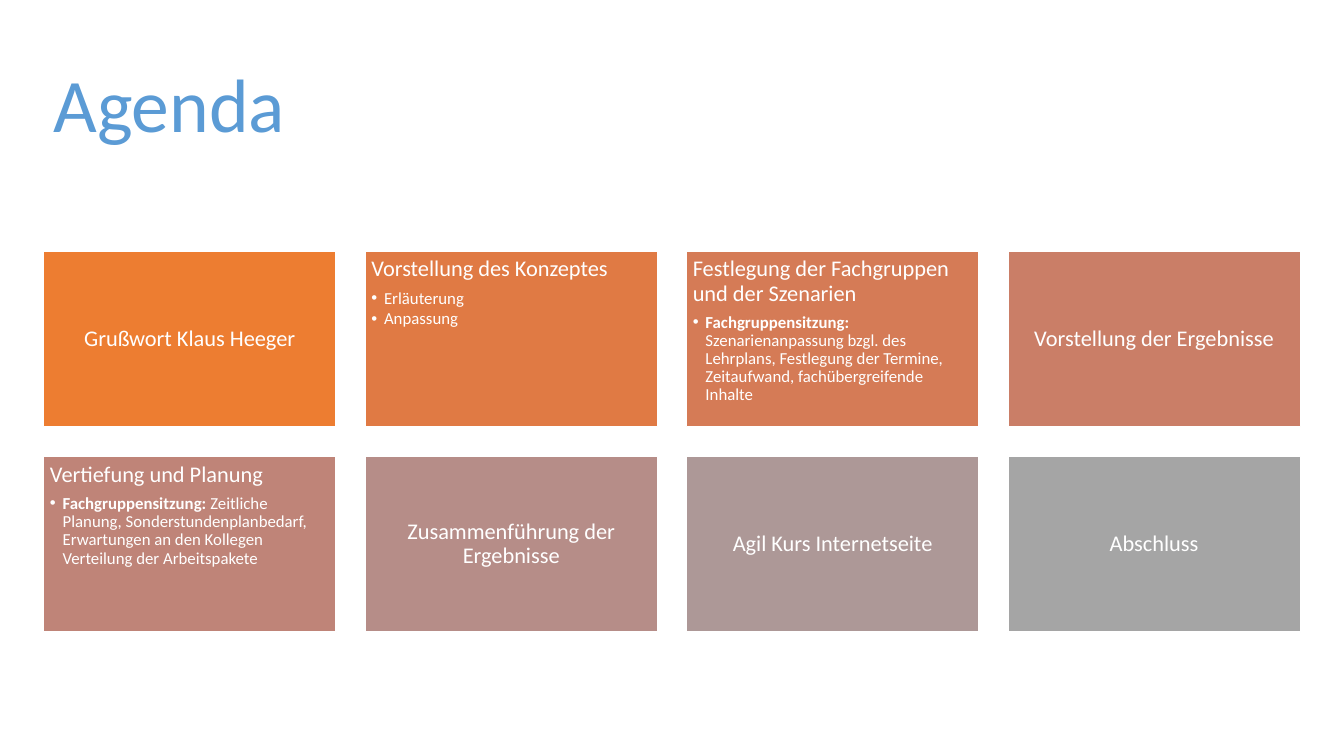
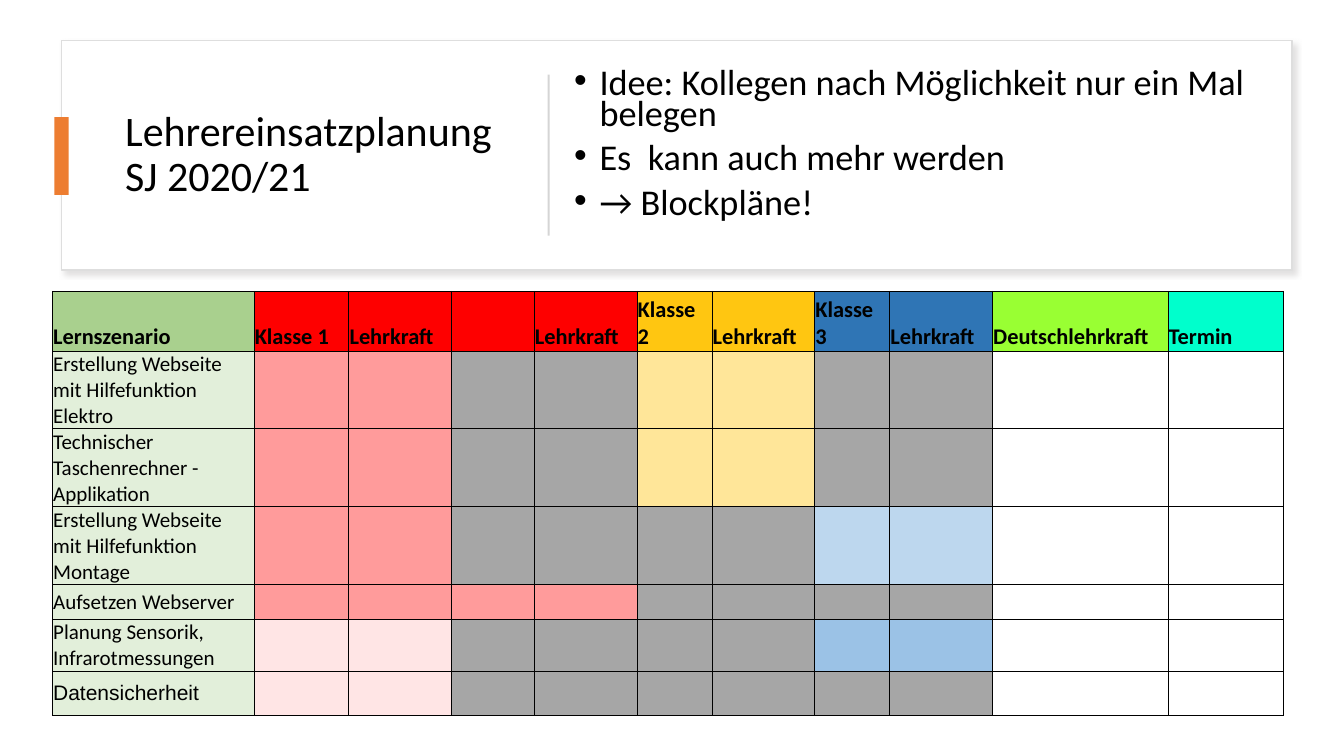
from lxml.etree import SubElement
from pptx import Presentation
from pptx.dml.color import RGBColor
from pptx.enum.shapes import MSO_SHAPE
from pptx.enum.text import MSO_ANCHOR, MSO_AUTO_SIZE, PP_ALIGN
from pptx.oxml.ns import qn
from pptx.util import Cm, Pt

FONT = "Calibri"
WHITE, BLACK, ORANGE = "FFFFFF", "000000", "ED7D31"
RED, ROSE, BLUSH = "FE0000", "FF9B9B", "FFE5E5"
GOLD, SAND = "FFC611", "FFE699"
BLUE, SKY, AZURE = "2F75B5", "BDD7EE", "9BC2E6"
GRAY, MINT = "A6A6A6", "E2EFDA"

TILES = [
    (ORANGE, "Grußwort Klaus Heeger", []),
    ("E07A44", "Vorstellung des Konzeptes",
     [("", "Erläuterung"), ("", "Anpassung")]),
    ("D57B56", "Festlegung der Fachgruppen und der Szenarien",
     [("Fachgruppensitzung:", " Szenarienanpassung bzgl. des Lehrplans, "
       "Festlegung der Termine, Zeitaufwand, fachübergreifende Inhalte")]),
    ("CA7E67", "Vorstellung der Ergebnisse", []),
    ("BF8478", "Vertiefung und Planung",
     [("Fachgruppensitzung: ", "Zeitliche Planung, Sonderstundenplanbedarf, "
       "Erwartungen an den Kollegen Verteilung der Arbeitspakete")]),
    ("B68D88", "Zusammenführung der Ergebnisse", []),
    ("AD9897", "Agil Kurs Internetseite", []),
    ("A5A5A5", "Abschluss", []),
]

IDEAS = [
    "Idee: Kollegen nach Möglichkeit nur ein Mal belegen",
    "Es  kann auch mehr werden",
    "→ Blockpläne!",
]

WIDTHS = [5.08, 2.39, 2.59, 2.08, 2.59, 1.89, 2.59, 1.89, 2.59, 4.42, 2.92]
HEADS = ["Lernszenario", "Klasse 1", "Lehrkraft", "", "Lehrkraft", "Klasse 2",
         "Lehrkraft", "Klasse 3", "Lehrkraft", "Deutschlehrkraft", "Termin"]
TINTS = ["A9D08E", *[RED] * 4, *[GOLD] * 2, *[BLUE] * 2, "99FF33", "00FFCC"]
PLANS = [
    ("Erstellung Webseite mit Hilfefunktion Elektro", 1.96,
     [ROSE, GRAY, SAND, GRAY]),
    ("Technischer Taschenrechner - Applikation", 1.96,
     [ROSE, GRAY, SAND, GRAY]),
    ("Erstellung Webseite mit Hilfefunktion Montage", 1.96,
     [ROSE, GRAY, GRAY, SKY]),
    ("Aufsetzen Webserver", 0.86, [ROSE, ROSE, GRAY, GRAY]),
    ("Planung Sensorik, Infrarotmessungen", 1.32,
     [BLUSH, GRAY, GRAY, AZURE]),
    ("Datensicherheit", 1.11, [BLUSH, GRAY, GRAY, GRAY]),
]


def color(code):
    return RGBColor.from_string(code)


def style(para, size, code, bold=False, font=FONT):
    for run in para.runs:
        run.font.name = font
        run.font.size = Pt(size)
        run.font.bold = bold
        run.font.color.rgb = color(code)


def bullet(para, indent):
    props = para._p.get_or_add_pPr()
    props.set("marL", str(Cm(indent)))
    props.set("indent", str(-Cm(indent)))
    SubElement(props, qn("a:buFont"), typeface="Arial")
    SubElement(props, qn("a:buChar"), char="•")


def place(shape, left, top, width, height):
    shape.left, shape.top = Cm(left), Cm(top)
    shape.width, shape.height = Cm(width), Cm(height)


def title(slide, text, box, size, code):
    shape = slide.shapes.title
    place(shape, *box)
    frame = shape.text_frame
    frame.text = text
    frame.word_wrap = True
    frame.auto_size = MSO_AUTO_SIZE.NONE
    frame.vertical_anchor = MSO_ANCHOR.MIDDLE
    para = frame.paragraphs[0]
    para.alignment = PP_ALIGN.LEFT
    para.line_spacing = 0.9
    style(para, size, code)


def rect(slide, box, fill, line=None):
    shape = slide.shapes.add_shape(MSO_SHAPE.RECTANGLE, *map(Cm, box))
    shape.shadow.inherit = False
    shape.fill.solid()
    shape.fill.fore_color.rgb = color(fill)
    if line:
        shape.line.color.rgb = color(line)
        shape.line.width = Pt(1)
    else:
        shape.line.fill.background()
    return shape


def shade(shape, code):
    effects = shape._element.spPr.find(qn("a:effectLst"))
    glow = SubElement(effects, qn("a:outerShdw"), blurRad=str(Pt(4)),
                      dist=str(Pt(3)), dir="2700000", rotWithShape="0")
    tone = SubElement(glow, qn("a:srgbClr"), val=code)
    SubElement(tone, qn("a:alpha"), val="50000")


def tile(slide, box, fill, head, items):
    frame = rect(slide, box, fill, WHITE).text_frame
    frame.word_wrap = True
    frame.margin_left = frame.margin_right = Cm(0.16)
    frame.margin_top = frame.margin_bottom = Cm(0.16)
    frame.vertical_anchor = MSO_ANCHOR.TOP if items else MSO_ANCHOR.MIDDLE
    frame.text = head
    para = frame.paragraphs[0]
    para.alignment = PP_ALIGN.LEFT if items else PP_ALIGN.CENTER
    para.line_spacing = 0.9
    para.space_after = Pt(5.6)
    style(para, 16, WHITE)
    for lead, rest in items:
        para = frame.add_paragraph()
        para.text = lead or rest
        para.alignment = PP_ALIGN.LEFT
        para.line_spacing = 0.9
        para.space_after = Pt(1.8)
        bullet(para, 0.32)
        if lead:
            para.add_run().text = rest
        style(para, 12, WHITE)
        para.runs[0].font.bold = bool(lead)


def notes(slide, box, lines):
    frame = slide.shapes.add_textbox(*map(Cm, box)).text_frame
    frame.word_wrap = True
    frame.text = "\n".join(lines)
    for para in frame.paragraphs:
        para.line_spacing = 0.7
        para.space_before = Pt(10)
        bullet(para, 0.64)
        style(para, 25.9, BLACK)


def border(cell):
    props = cell._tc.get_or_add_tcPr()
    for side in ("lnL", "lnR", "lnT", "lnB"):
        line = SubElement(props, qn("a:" + side), w=str(Pt(0.5)))
        fill = SubElement(line, qn("a:solidFill"))
        SubElement(fill, qn("a:srgbClr"), val=BLACK)


def paint(cell, text, fill, head):
    border(cell)
    cell.fill.solid()
    cell.fill.fore_color.rgb = color(fill)
    cell.margin_left = cell.margin_right = cell.margin_top = Cm(0.02)
    cell.margin_bottom = 0
    cell.vertical_anchor = MSO_ANCHOR.BOTTOM if head else MSO_ANCHOR.MIDDLE
    if text:
        cell.text_frame.text = text
        font = "Arial" if text == "Datensicherheit" else FONT
        style(cell.text_frame.paragraphs[0], 16 if head else 15, BLACK,
              head, font)


def grid(slide, left, top):
    rows = [(1.5, HEADS, TINTS)]
    for name, height, pairs in PLANS:
        fills = [MINT, *[tint for tint in pairs for _ in range(2)],
                 WHITE, WHITE]
        rows.append((height, [name] + [""] * 10, fills))
    total = sum(row[0] for row in rows)
    table = slide.shapes.add_table(len(rows), len(WIDTHS), Cm(left), Cm(top),
                                   Cm(sum(WIDTHS)), Cm(total)).table
    table.first_row = table.horz_banding = False
    for col, width in zip(table.columns, WIDTHS):
        col.width = Cm(width)
    for r, (height, texts, fills) in enumerate(rows):
        table.rows[r].height = Cm(height)
        for c, (text, fill) in enumerate(zip(texts, fills)):
            paint(table.cell(r, c), text, fill, r == 0)


def agenda(slide):
    title(slide, "Agenda", (1.09, 0.89, 31.7, 3.68), 54, "5B9BD5")
    for i, (fill, head, items) in enumerate(TILES):
        row, col = divmod(i, 4)
        box = (1.1 + 8.1 * col, 6.33 + 5.18 * row, 7.37, 4.42)
        tile(slide, box, fill, head, items)


def staff(slide):
    panel = rect(slide, (1.55, 1.02, 31.01, 5.79), WHITE, "DEDEDE")
    shade(panel, "C5C3C3")
    slide.shapes._spTree.insert(2, panel._element)
    title(slide, "Lehrereinsatzplanung SJ 2020/21",
          (2.9, 1.63, 9.88, 4.57), 30, BLACK)
    rect(slide, (1.37, 2.95, 0.36, 1.96), ORANGE)
    rect(slide, (13.8, 1.88, 0.05, 4.06), "D5D5D5")
    grid(slide, 1.32, 7.34)
    notes(slide, (14.22, 1.68, 18.85, 4.27), IDEAS)


def main():
    deck = Presentation()
    deck.slide_width, deck.slide_height = Cm(33.87), Cm(19.05)
    for build in (agenda, staff):
        build(deck.slides.add_slide(deck.slide_layouts[5]))
    deck.save("out.pptx")


if __name__ == "__main__":
    main()
